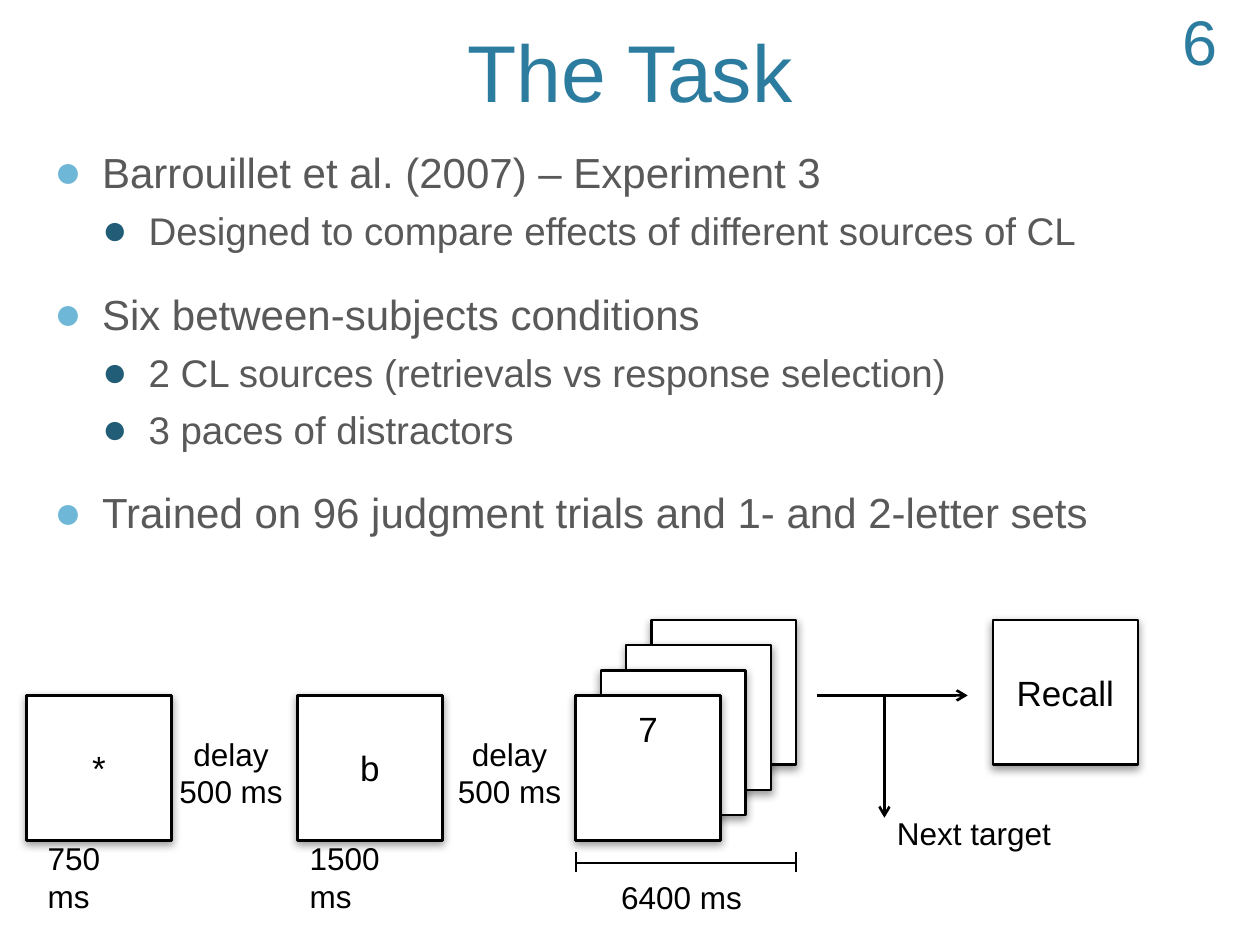
"""Build a slide that describes the memory task and its trial timeline."""
from dataclasses import dataclass

from lxml import etree
from pptx import Presentation
from pptx.dml.color import RGBColor
from pptx.enum.shapes import MSO_CONNECTOR, MSO_SHAPE
from pptx.enum.text import MSO_ANCHOR, PP_ALIGN
from pptx.oxml.ns import qn
from pptx.util import Pt

LEFT, CENTER, RIGHT = PP_ALIGN.LEFT, PP_ALIGN.CENTER, PP_ALIGN.RIGHT
TOP, MIDDLE, BOTTOM = MSO_ANCHOR.TOP, MSO_ANCHOR.MIDDLE, MSO_ANCHOR.BOTTOM
RECTANGLE, STRAIGHT = MSO_SHAPE.RECTANGLE, MSO_CONNECTOR.STRAIGHT


@dataclass(frozen=True)
class Theme:
    font: str = "Arial"
    accent: str = "2C7C9F"
    body: str = "595959"
    ink: str = "000000"
    paper: str = "FFFFFF"
    bullets: tuple = ("6FB7D7", "215D77")
    body_sizes: tuple = (24, 22)
    title_size: int = 46
    number_size: int = 36
    screen_size: int = 20
    label_size: int = 18


THEME = Theme()


def write(frame, lines, size, color, align=LEFT, anchor=TOP, wrap=True):
    frame.word_wrap = wrap
    frame.vertical_anchor = anchor
    for index, line in enumerate(lines):
        paragraph = frame.paragraphs[0] if index == 0 else frame.add_paragraph()
        paragraph.alignment = align
        run = paragraph.add_run()
        run.text = line
        run.font.name = THEME.font
        run.font.size = Pt(size)
        run.font.color.rgb = RGBColor.from_string(color)


def add_effects(shape, shadowed):
    effects = etree.SubElement(shape._element.spPr, qn("a:effectLst"))
    if shadowed:
        shadow = etree.SubElement(effects, qn("a:outerShdw"), blurRad=str(Pt(5)),
                                  dist=str(Pt(2)), dir="5400000", rotWithShape="0")
        tint = etree.SubElement(shadow, qn("a:srgbClr"), val=THEME.ink)
        etree.SubElement(tint, qn("a:alpha"), val="40000")


prs = Presentation()
prs.slide_width, prs.slide_height = Pt(720), Pt(540)
slide = prs.slides.add_slide(prs.slide_layouts[6])
shapes = slide.shapes

title = shapes.add_textbox(Pt(43.2), Pt(-33.8), Pt(633.6), Pt(105.1))
write(title.text_frame, ["The Task"], THEME.title_size, THEME.accent, CENTER, BOTTOM)

outline = [
    (0, "Barrouillet et al. (2007) – Experiment 3"),
    (1, "Designed to compare effects of different sources of CL"),
    (0, "Six between-subjects conditions"),
    (1, "2 CL sources (retrievals vs response selection)"),
    (1, "3 paces of distractors"),
    (0, "Trained on 96 judgment trials and 1- and 2-letter sets"),
]
task_points = shapes.add_textbox(Pt(23.8), Pt(79.9), Pt(684.7), Pt(360)).text_frame
write(task_points, [text for _, text in outline], THEME.body_sizes[0], THEME.body)
for paragraph, (level, _) in zip(task_points.paragraphs, outline):
    paragraph.level = level
    paragraph.space_before = Pt((20, 6)[level])
    paragraph.runs[0].font.size = Pt(THEME.body_sizes[level])
    props = paragraph._p.get_or_add_pPr()
    props.set("marL", str(Pt((27.4, 54)[level])))
    props.set("indent", str(Pt((-27.4, -26.6)[level])))
    bullet_color = etree.SubElement(props, qn("a:buClr"))
    etree.SubElement(bullet_color, qn("a:srgbClr"), val=THEME.bullets[level])
    etree.SubElement(props, qn("a:buSzPct"), val="110000")
    etree.SubElement(props, qn("a:buFont"), typeface=THEME.font)
    etree.SubElement(props, qn("a:buChar"), char="●")

SCREEN, STEP = 82.8, 14.4
row_top, stack_left = 397.4, 329
screens = [(567.4, row_top - 3 * STEP, "Recall")]
screens += [(stack_left + n * STEP, row_top - n * STEP, "") for n in (3, 2, 1)]
screens += [(stack_left, row_top, "7"), (169.9, row_top, "b"), (15.1, row_top, "*")]
for left, top, stimulus in screens:
    screen = shapes.add_shape(RECTANGLE, Pt(left), Pt(top), Pt(SCREEN), Pt(SCREEN))
    screen.fill.solid()
    screen.fill.fore_color.rgb = RGBColor.from_string(THEME.paper)
    screen.line.color.rgb = RGBColor.from_string(THEME.ink)
    screen.line.width = Pt(1.5)
    add_effects(screen, True)
    if stimulus:
        is_distractor = stimulus == "7"
        write(screen.text_frame, [stimulus], THEME.screen_size, THEME.ink, CENTER,
              TOP if is_distractor else MIDDLE)
        if is_distractor:
            screen.text_frame.margin_top = Pt(7)

delay = ["delay", "500 ms"]
labels = [
    (20.2, 475.9, 72.5, 28.8, ["750 ms"], LEFT, True),
    (169.9, 475.9, 82.2, 28.8, ["1500 ms"], LEFT, True),
    (93.6, 416.2, 77, 51.1, delay, CENTER, True),
    (252.7, 416.2, 77, 51.1, delay, CENTER, True),
    (347.8, 498.2, 85.7, 28.8, ["6400 ms"], LEFT, False),
    (505.4, 461.5, 104.4, 28.8, ["Next target"], LEFT, False),
]
for left, top, width, height, lines, align, wrap in labels:
    label = shapes.add_textbox(Pt(left), Pt(top), Pt(width), Pt(height))
    write(label.text_frame, lines, THEME.label_size, THEME.ink, align, wrap=wrap)

span_right = stack_left + 3 * STEP + SCREEN
branch_x = 505.4
links = [
    (stack_left, 493.2, span_right, 493.2, 1.5, False),
    (stack_left, 498.2, stack_left, 486.7, 1, False),
    (span_right, 498.2, span_right, 486.7, 1, False),
    (466.6, row_top, 553, row_top, 1.5, True),
    (branch_x, row_top, branch_x, 467.3, 1.5, True),
]
for x1, y1, x2, y2, weight, has_arrow in links:
    link = shapes.add_connector(STRAIGHT, Pt(x1), Pt(y1), Pt(x2), Pt(y2))
    link.line.color.rgb = RGBColor.from_string(THEME.ink)
    link.line.width = Pt(weight)
    if has_arrow:
        etree.SubElement(link.line._get_or_add_ln(), qn("a:tailEnd"), type="arrow")
    add_effects(link, False)

page_number = shapes.add_textbox(Pt(625), Pt(8.6), Pt(77.8), Pt(28.8))
write(page_number.text_frame, ["6"], THEME.number_size, THEME.accent, RIGHT, MIDDLE)

prs.save("out.pptx")
